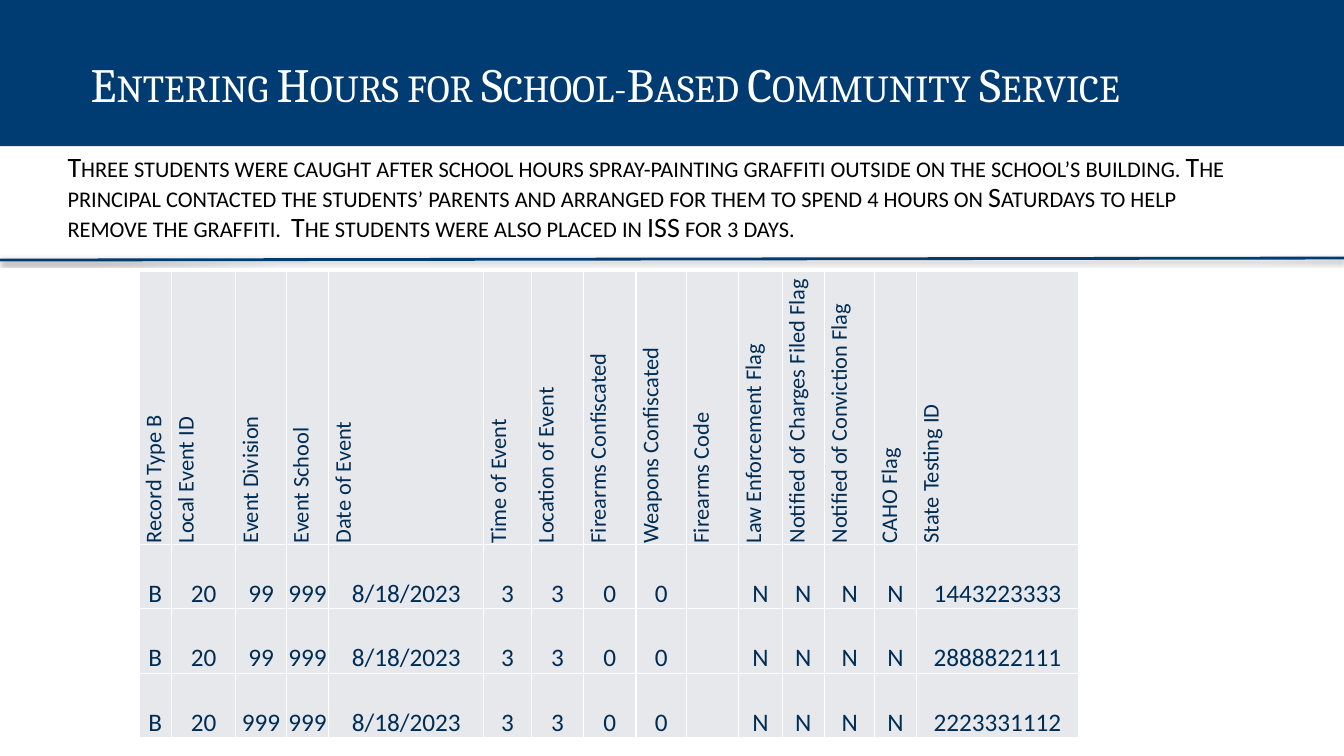
from dataclasses import dataclass

from lxml.etree import SubElement
from pptx import Presentation
from pptx.dml.color import RGBColor
from pptx.enum.shapes import MSO_CONNECTOR as Connector
from pptx.enum.text import MSO_ANCHOR as Anchor, MSO_AUTO_SIZE as AutoSize, PP_ALIGN as Align
from pptx.oxml import parse_xml
from pptx.oxml.ns import nsdecls, qn
from pptx.util import Pt

PX = 9144  # EMU per px, 100 px to the inch

NAVY = RGBColor(0x00, 0x3C, 0x71)
INK = RGBColor(0x00, 0x2D, 0x55)
CELL = RGBColor(0xE7, 0xE8, 0xEB)
WHITE = RGBColor(0xFF, 0xFF, 0xFF)
BLACK = RGBColor(0x00, 0x00, 0x00)


@dataclass
class Block:
    text: str
    box: tuple[int, int, int, int]
    margins: tuple[int, int, int, int]
    font: str
    size: float
    color: RGBColor
    spacing: float
    before: int = 0


@dataclass
class Column:
    header: str
    width: int
    values: tuple[str, str, str]


TITLE = Block("Entering Hours for School-Based Community Service",
              (0, 0, 1333, 145), (90, 70, 10, 5), "Cambria", 34.1, WHITE, 0.7, 10)
STORY = Block("Three students were caught after school hours spray-painting graffiti "
              "outside on the school’s building. The principal contacted the students’ "
              "parents and arranged for them to spend 4 hours on Saturdays to help "
              "remove the graffiti.  The students were also placed in ISS for 3 days.",
              (54, 145, 1191, 562), (13, 7, 13, 7), "Calibri", 20, BLACK, 0.9)

COLUMNS = [
    Column("Record Type B", 32, ("B",) * 3),
    Column("Local Event ID", 64, ("20",) * 3),
    Column("Event Division", 50, ("99", "99", "999")),
    Column("Event School", 42, ("999",) * 3),
    Column("Date of Event", 154, ("8/18/2023",) * 3),
    Column("Time of Event", 47, ("3",) * 3),
    Column("Location of Event", 52, ("3",) * 3),
    Column("Firearms Confiscated", 52, ("0",) * 3),
    Column("Weapons Confiscated", 50, ("0",) * 3),
    Column("Firearms Code", 52, ("",) * 3),
    Column("Law Enforcement Flag", 43, ("N",) * 3),
    Column("Notified of Charges Filed Flag", 42, ("N",) * 3),
    Column("Notified of Conviction Flag", 50, ("N",) * 3),
    Column("CAHO Flag", 41, ("N",) * 3),
    Column("State Testing ID", 161, ("1443223333", "2888822111", "2223331112")),
]
ROW_HEIGHTS = (271, 64, 64, 64)
TABLE_LEFT, TABLE_TOP = 138, 269


def set_all(target, values: dict) -> None:
    for name, value in values.items():
        setattr(target, name, value)


def margins(left: int, top: int, right: int, bottom: int) -> dict:
    return {"margin_left": left * PX, "margin_top": top * PX,
            "margin_right": right * PX, "margin_bottom": bottom * PX}


def add_run(p, text: str, font: str, size: float, color: RGBColor):
    r = p.add_run()
    r.text = text
    set_all(r.font, {"name": font, "size": Pt(size)})
    r.font.color.rgb = color
    return r


def fill_placeholder(s, block: Block) -> None:
    left, top, width, height = (n * PX for n in block.box)
    set_all(s, {"left": left, "top": top, "width": width, "height": height})
    tf = s.text_frame
    set_all(tf, {"word_wrap": True, "auto_size": AutoSize.NONE,
                 "vertical_anchor": Anchor.TOP, **margins(*block.margins)})
    p = tf.paragraphs[0]
    set_all(p, {"alignment": Align.LEFT, "line_spacing": block.spacing,
                "space_before": Pt(block.before)})
    pPr = p._p.get_or_add_pPr()
    pPr.set("marL", "0")
    pPr.set("indent", "0")
    SubElement(pPr, qn("a:buNone"))
    r = add_run(p, block.text, block.font, block.size, block.color)
    r._r.get_or_add_rPr().set("cap", "small")


def add_rule(shapes) -> None:
    s = shapes.add_connector(Connector.STRAIGHT, 0, 258 * PX, 1333 * PX, 256 * PX)
    s.line.color.rgb = NAVY
    s.line.width = Pt(2)
    s._element.spPr.append(parse_xml(
        f'<a:effectLst {nsdecls("a")}>'
        f'<a:outerShdw blurRad="{Pt(3.1)}" dist="{Pt(1.6)}" dir="5400000" rotWithShape="0">'
        '<a:srgbClr val="000000"><a:alpha val="38000"/></a:srgbClr>'
        '</a:outerShdw></a:effectLst>'))


def format_cell(cell, text: str, is_header: bool) -> None:
    set_all(cell, {"vertical_anchor": Anchor.BOTTOM, **margins(1, 1, 1, 0)})
    cell.fill.solid()
    cell.fill.fore_color.rgb = CELL
    tcPr = cell._tc.get_or_add_tcPr()
    if is_header:
        tcPr.set("vert", "vert270")
    # Borders come before the fill
    for i, side in enumerate("LRTB"):
        tcPr.insert(i, parse_xml(
            f'<a:ln{side} {nsdecls("a")} w="{Pt(1)}"><a:solidFill>'
            f'<a:srgbClr val="{WHITE}"/></a:solidFill></a:ln{side}>'))
    p = cell.text_frame.paragraphs[0]
    p.alignment = Align.LEFT if is_header else Align.CENTER
    if text:
        add_run(p, text, "Calibri", 16 if is_header else 18, INK)


def add_event_table(shapes) -> None:
    width = sum(column.width for column in COLUMNS)
    table = shapes.add_table(len(ROW_HEIGHTS), len(COLUMNS), TABLE_LEFT * PX, TABLE_TOP * PX,
                             width * PX, sum(ROW_HEIGHTS) * PX).table
    set_all(table, {"first_row": False, "horz_banding": False})
    for row, height in zip(table.rows, ROW_HEIGHTS):
        row.height = height * PX
    for c, column in enumerate(COLUMNS):
        table.columns[c].width = column.width * PX
        for r, text in enumerate((column.header, *column.values)):
            format_cell(table.cell(r, c), text, r == 0)


def main() -> None:
    prs = Presentation()
    set_all(prs, {"slide_width": 1333 * PX, "slide_height": 750 * PX})
    slide = prs.slides.add_slide(prs.slide_layouts[1])

    # Title band and story
    title, story = slide.placeholders
    title.fill.solid()
    title.fill.fore_color.rgb = NAVY
    fill_placeholder(title, TITLE)
    fill_placeholder(story, STORY)

    # Rule and event records
    add_rule(slide.shapes)
    add_event_table(slide.shapes)
    prs.save("out.pptx")


if __name__ == "__main__":
    main()
